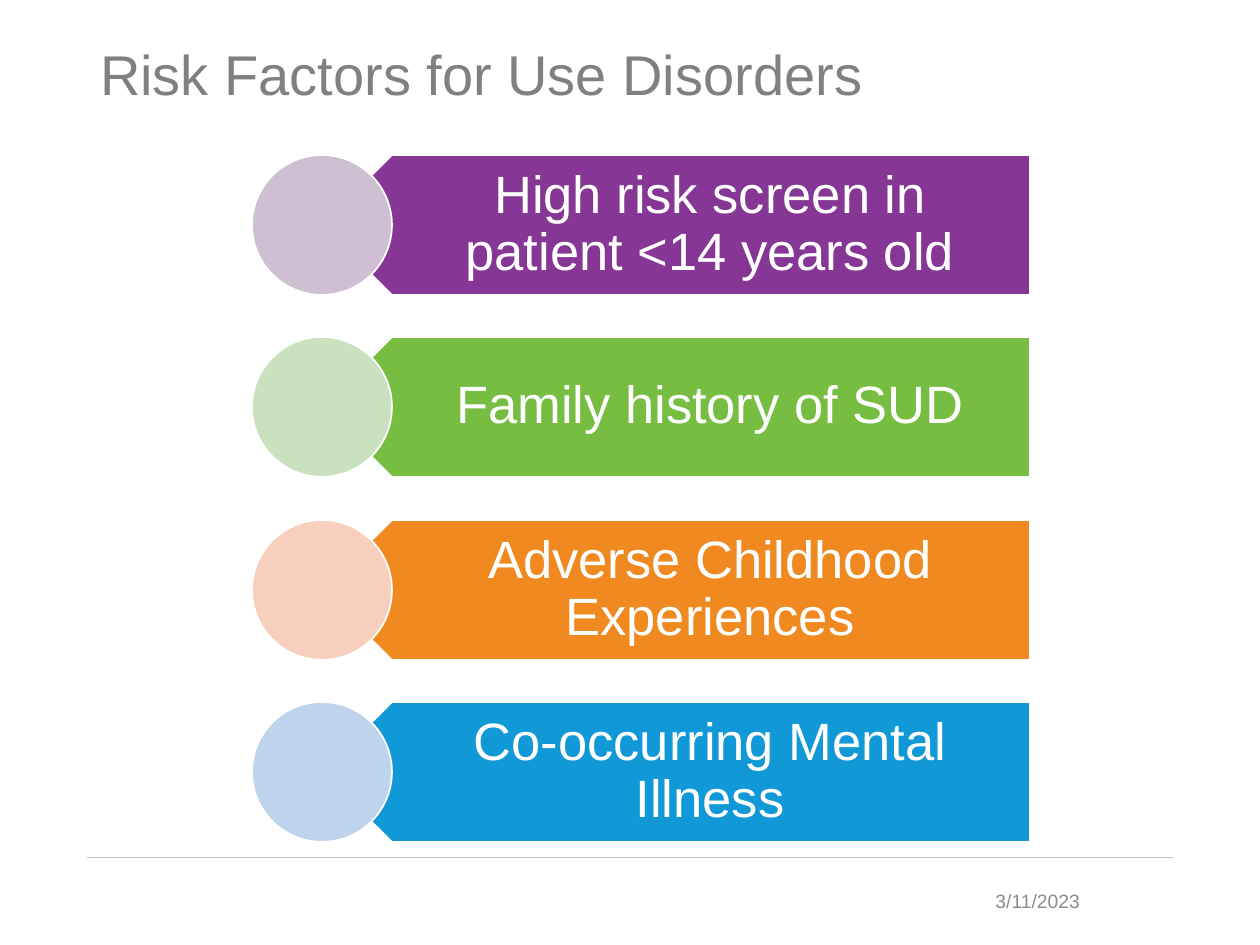
import pptx
import pptx.util
import pptx.dml.color
import pptx.enum.shapes
import pptx.enum.text
import pptx.oxml.ns
import lxml.etree

SCALE = 914400 / 126
COLORS = {
    "title": "808080", "date": "8C8C8C", "rule": "BFBFBF", "white": "FFFFFF",
    "purple": "863694", "pale_purple": "CEBFD2",
    "green": "77BD42", "pale_green": "CAE1C0",
    "orange": "F08A20", "pale_orange": "F8CFBD",
    "blue": "1099D6", "pale_blue": "BDD4EC",
}
FACTORS = [
    ("High risk screen in patient <14 years old", "purple"),
    ("Family history of SUD", "green"),
    ("Adverse Childhood Experiences", "orange"),
    ("Co-occurring Mental Illness", "blue"),
]
SHAPE = pptx.enum.shapes.MSO_SHAPE
ALIGN = pptx.enum.text.PP_ALIGN


def px(n):
    return pptx.util.Emu(round(n * SCALE))


def rgb(name):
    return pptx.dml.color.RGBColor.from_string(COLORS[name])


def write(tf, text, size, color, align=ALIGN.LEFT, spacing=1.0, insets=(13, 6, 13, 6)):
    tf.word_wrap = True
    tf.auto_size = pptx.enum.text.MSO_AUTO_SIZE.NONE
    tf.vertical_anchor = pptx.enum.text.MSO_ANCHOR.MIDDLE
    tf.margin_left, tf.margin_top, tf.margin_right, tf.margin_bottom = map(px, insets)
    p = tf.paragraphs[0]
    p.alignment = align
    p.line_spacing = spacing
    r = p.add_run()
    r.text = text
    r.font.name = "Arial"
    r.font.size = pptx.util.Pt(size)
    r.font.color.rgb = rgb(color)


class Deck:
    """Holds the style and the current slide, with a method for each kind of element."""

    def __init__(self):
        self.prs = pptx.Presentation()
        self.prs.slide_width, self.prs.slide_height = px(1260), px(945)
        self.s = self.prs.slides.add_slide(self.prs.slide_layouts[5])

    def title(self, text, x, y, w, h):
        sp = self.s.shapes.title
        sp.left, sp.top, sp.width, sp.height = map(px, (x, y, w, h))
        write(sp.text_frame, text, 32, "title", spacing=0.9)

    def text(self, text, x, y, w, h, **fmt):
        sp = self.s.shapes.add_textbox(*map(px, (x, y, w, h)))
        write(sp.text_frame, text, **fmt)

    def shape(self, kind, x, y, w, h, fill, rotation=0):
        sp = self.s.shapes.add_shape(kind, *map(px, (x, y, w, h)))
        sp.shadow.inherit = False
        sp.rotation = rotation
        sp.fill.solid()
        sp.fill.fore_color.rgb = rgb(fill)
        sp.line.color.rgb = rgb("white")
        sp.line.width = pptx.util.Pt(1)

    def rule(self, x1, y1, x2, y2):
        c = self.s.shapes.add_connector(
            pptx.enum.shapes.MSO_CONNECTOR.STRAIGHT, *map(px, (x1, y1, x2, y2)))
        c.line.color.rgb = rgb("rule")
        c.line.width = pptx.util.Pt(0.5)
        lxml.etree.SubElement(c._element.spPr, pptx.oxml.ns.qn("a:effectLst"))

    def factor(self, text, color, y, h):
        self.shape(SHAPE.PENTAGON, 322, y, 708, h, color, rotation=180)
        self.text(text, 357, y, 673, h, size=30, color="white", align=ALIGN.CENTER,
                  spacing=0.9, insets=(62, 15, 29, 15))
        self.shape(SHAPE.OVAL, 252, y, h, h, "pale_" + color)


def main():
    deck = Deck()
    deck.rule(87, 857, 1173, 857)
    deck.title("Risk Factors for Use Disorders", 87, 0, 1086, 155)
    deck.text("3/11/2023", 925, 876, 168, 50, size=11, color="date", align=ALIGN.RIGHT)
    top, bottom, height = 155, 842, 140
    pitch = (bottom - height - top) / (len(FACTORS) - 1)
    for i, (text, color) in enumerate(FACTORS):
        deck.factor(text, color, round(top + i * pitch), height)
    deck.prs.save("out.pptx")


if __name__ == "__main__":
    main()
